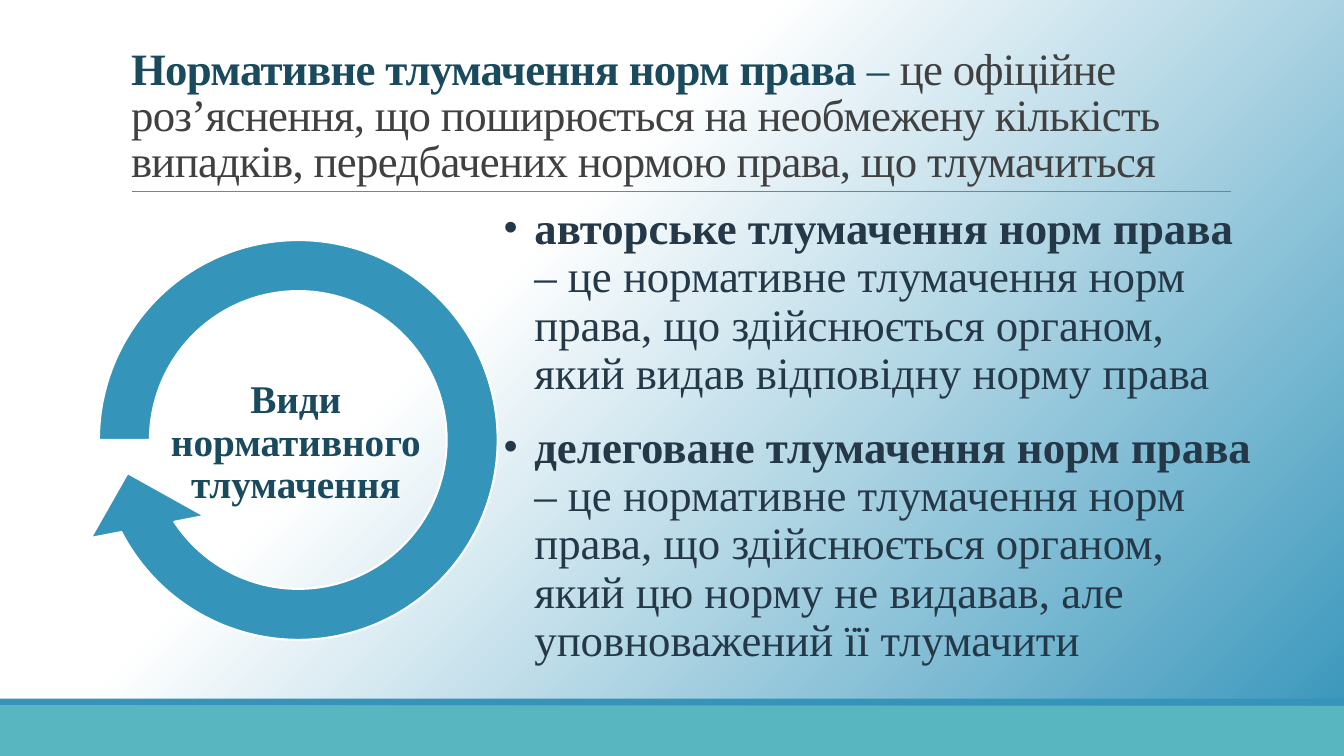
from copy import deepcopy
from dataclasses import dataclass

from lxml import etree
from pptx import Presentation
from pptx import util as u
from pptx.dml.color import RGBColor
from pptx.enum import shapes, text
from pptx.oxml import ns

FONT = "Times New Roman"
COLOURS = {
    "white": "FFFFFF",
    "blue": "3494BA",
    "teal": "58B6C0",
    "rule": "808080",
    "heading": "1A4A5D",
    "definition": "404040",
    "body": "253848",
}


@dataclass(frozen=True)
class Area:
    left: float
    top: float
    width: float
    height: float

    def lengths(self) -> tuple:
        return tuple(u.Pt(n) for n in (self.left, self.top, self.width, self.height))


@dataclass(frozen=True)
class Block:
    kind: str
    area: Area
    fill: str
    line: str = ""
    line_width: float = 0
    adjustments: tuple = ()


@dataclass(frozen=True)
class Kind:
    term: str
    meaning: str


BLOCKS = (
    Block("RECTANGLE", Area(0, 504, 960, 36), "teal"),
    Block("RECTANGLE", Area(0, 499, 960, 5), "blue"),
    Block("CIRCULAR_ARROW", Area(47.5, 148.3, 331.2, 331.9), "blue", "white", 1.5,
          (0.11, 11.42, 90, 108, 0.125)),
)
KINDS = (
    Kind("авторське тлумачення норм права ",
         "– це нормативне тлумачення норм права, що здійснюється органом, "
         "який видав відповідну норму права"),
    Kind("делеговане тлумачення норм права ",
         "– це нормативне тлумачення норм права, що здійснюється органом, "
         "який цю норму не видавав, але уповноважений її тлумачити"),
)


def colour(name: str) -> RGBColor:
    return RGBColor.from_string(COLOURS[name])


def add_span(para, words: str, *, size: float = 32, shade: str = "body",
             bold: bool = False, spacing: float = 0) -> None:
    span = para.add_run()
    span.text = words
    span.font.name = FONT
    span.font.size = u.Pt(size)
    span.font.bold = bold
    span.font.color.rgb = colour(shade)
    if spacing:
        span.font._element.set("spc", str(round(spacing * 100)))


def format_para(para, *, line_spacing: float, after: float = 0,
                align=text.PP_ALIGN.LEFT) -> None:
    para.alignment = align
    para.line_spacing = line_spacing
    para.space_before = u.Pt(0)
    para.space_after = u.Pt(after)


def prepare_frame(box, area: Area, *, anchor, inset_x: float = 1.4, inset_y: float = 1.4):
    """Place the box and return its wrapped, fixed-size text frame."""
    box.left, box.top, box.width, box.height = area.lengths()
    frame = box.text_frame
    frame.word_wrap = True
    frame.auto_size = text.MSO_AUTO_SIZE.NONE
    frame.vertical_anchor = anchor
    frame.margin_left = frame.margin_right = u.Pt(inset_x)
    frame.margin_top = frame.margin_bottom = u.Pt(inset_y)
    return frame


def add_bullet(para, hang: float) -> None:
    props = para._p.get_or_add_pPr()
    props.set("marL", str(u.Pt(hang)))
    props.set("indent", str(-u.Pt(hang)))
    etree.SubElement(props, ns.qn("a:buFont")).set("typeface", FONT)
    etree.SubElement(props, ns.qn("a:buChar")).set("char", "•")


def paint_background(page) -> None:
    """White up to 37 %, then a diagonal fade to blue."""
    fill = page.background.fill
    fill.gradient()
    fill.gradient_angle = 315
    first, last = fill.gradient_stops
    first.color.rgb, last.color.rgb = colour("white"), colour("blue")
    first.position, last.position = 0, 1
    middle = deepcopy(first._gs)
    middle.set("pos", "37000")
    first._gs.addnext(middle)


def add_block(page, block: Block) -> None:
    shape = page.shapes.add_shape(
        getattr(shapes.MSO_SHAPE, block.kind), *block.area.lengths())
    shape.shadow.inherit = False
    shape.fill.solid()
    shape.fill.fore_color.rgb = colour(block.fill)
    if block.line:
        shape.line.color.rgb = colour(block.line)
        shape.line.width = u.Pt(block.line_width)
    else:
        shape.line.fill.background()
    for index, value in enumerate(block.adjustments):
        shape.adjustments[index] = value


def add_rule(page) -> None:
    left, right, top = u.Pt(94.3), u.Pt(879), u.Pt(136.8)
    rule = page.shapes.add_connector(shapes.MSO_CONNECTOR.STRAIGHT, left, top, right, top)
    rule.line.color.rgb = colour("rule")
    rule.line.width = u.Pt(0.5)
    etree.SubElement(rule._element.spPr, ns.qn("a:effectLst"))


def fill_title(page) -> None:
    frame = prepare_frame(page.shapes.title, Area(86.4, 22.3, 792, 114.5),
                          anchor=text.MSO_ANCHOR.BOTTOM, inset_x=7.2, inset_y=3.6)
    para = frame.paragraphs[0]
    format_para(para, line_spacing=0.85)
    add_span(para, "Нормативне тлумачення норм права ",
             shade="heading", bold=True, spacing=-0.5)
    add_span(para, "– ", shade="heading", spacing=-0.5)
    add_span(para, "це офіційне роз’яснення, що поширюється на необмежену кількість "
             "випадків, передбачених нормою права, що тлумачиться",
             shade="definition", spacing=-0.5)


def fill_kinds(page) -> None:
    frame = prepare_frame(page.placeholders[1], Area(357.8, 148.3, 545.8, 326.2),
                          anchor=text.MSO_ANCHOR.MIDDLE)
    for index, kind in enumerate(KINDS):
        para = frame.add_paragraph() if index else frame.paragraphs[0]
        format_para(para, line_spacing=0.9, after=18)
        add_bullet(para, 22.5)
        add_span(para, kind.term, bold=True)
        add_span(para, kind.meaning)


def add_label(page) -> None:
    area = Area(118.8, 270.7, 185, 92.2)
    frame = prepare_frame(page.shapes.add_textbox(*area.lengths()), area,
                          anchor=text.MSO_ANCHOR.MIDDLE)
    para = frame.paragraphs[0]
    format_para(para, line_spacing=0.9, align=text.PP_ALIGN.CENTER)
    add_span(para, "Види нормативного тлумачення", size=28, shade="heading", bold=True)


def main() -> None:
    deck = Presentation()
    deck.slide_width, deck.slide_height = u.Pt(960), u.Pt(540)
    page = deck.slides.add_slide(deck.slide_layouts[1])
    paint_background(page)
    for block in BLOCKS:
        add_block(page, block)
    add_rule(page)
    fill_title(page)
    fill_kinds(page)
    add_label(page)
    deck.save("out.pptx")


if __name__ == "__main__":
    main()
